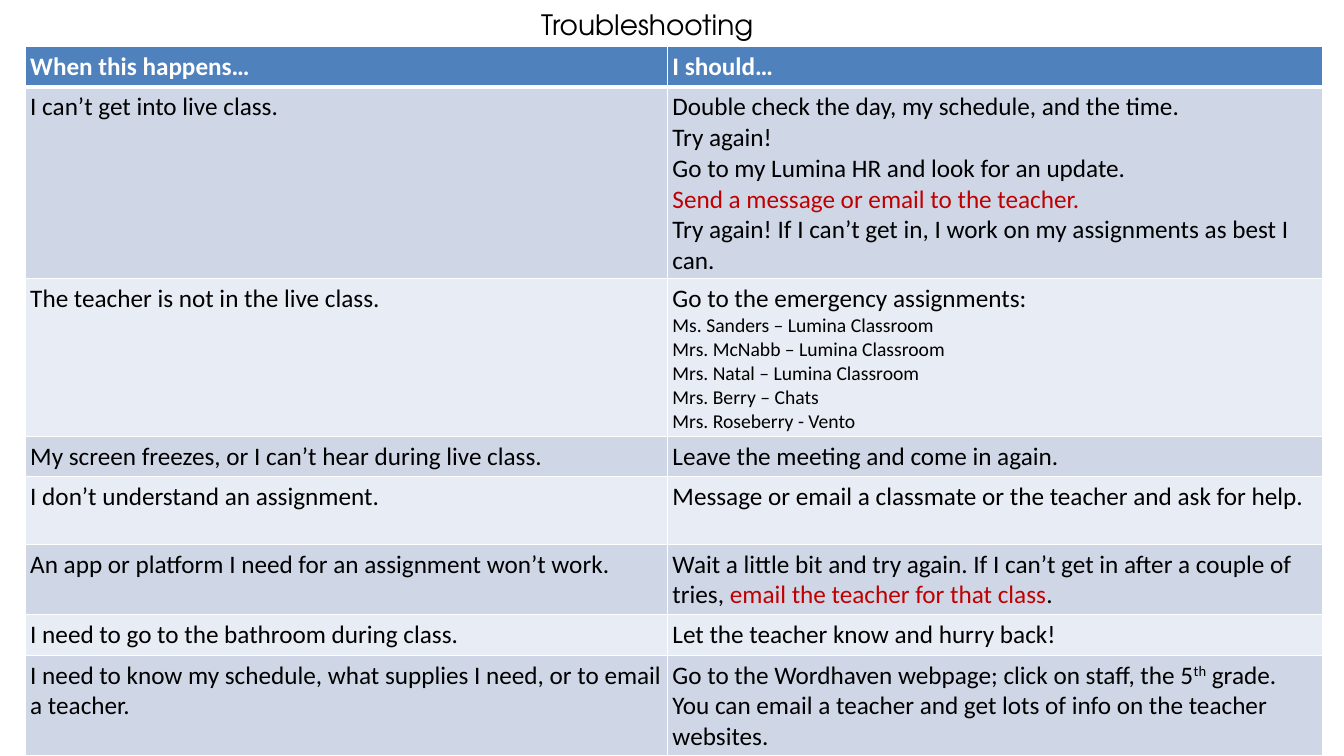
from lxml import etree
from pptx import Presentation
from pptx.dml.color import RGBColor
from pptx.enum.text import PP_ALIGN
from pptx.oxml.ns import qn
from pptx.util import Pt

PX = 9144  # EMU in one px, 100 px to the inch
INSET = 5 * PX
CENTER, LEFT = PP_ALIGN.CENTER, PP_ALIGN.LEFT

WHITE = RGBColor(0xFF, 0xFF, 0xFF)
BLACK = RGBColor(0x00, 0x00, 0x00)
RED = RGBColor(0xC0, 0x00, 0x00)
BLUE = RGBColor(0x4F, 0x81, 0xBD)
BANDS = (RGBColor(0xCF, 0xD7, 0xE7), RGBColor(0xE8, 0xEC, 0xF4))

COLUMN_WIDTHS = (637, 650)
HEADER = ("When this happens…", "I should…")
HEADER_HEIGHT = 37

# Row height, problem, and the paragraphs of the answer.
# A paragraph is a list of spans: text and its format.
PROBLEMS = [
    (181, "I can’t get into live class.", [
        [("Double check the day, my schedule, and the time.", {})],
        [("Try again!", {})],
        [("Go to my Lumina HR and look for an update.", {})],
        [("Send a message or email to the teacher.", {"color": RED})],
        [("Try again! If I can’t get in, I work on my assignments as best I can.", {})],
    ]),
    (149, "The teacher is not in the live class.", [
        [("Go to the emergency assignments:", {})],
        *[[(f"{teacher}", {"size": 14})] for teacher in (
            "Ms. Sanders – Lumina Classroom",
            "Mrs. McNabb – Lumina Classroom",
            "Mrs. Natal – Lumina Classroom",
            "Mrs. Berry – Chats",
            "Mrs. Roseberry - Vento",
        )],
    ]),
    (38, "My screen freezes, or I can’t hear during live class.", [
        [("Leave the meeting and come in again.", {})],
    ]),
    (67, "I don’t understand an assignment.", [
        [("Message or email a classmate or the teacher and ask for help.", {})],
    ]),
    (67, "An app or platform I need for an assignment won’t work.", [
        [("Wait a little bit and try again. If I can’t get in after a couple of tries, ", {}),
         ("email the teacher for that class", {"color": RED}),
         (".", {})],
    ]),
    (38, "I need to go to the bathroom during class.", [
        [("Let the teacher know and hurry back!", {})],
    ]),
    (95, "I need to know my schedule, what supplies I need, or to email a teacher.", [
        [("Go to the Wordhaven webpage; click on staff, the 5", {}),
         ("th", {"raised": 30}),
         (" grade. You can email a teacher and get lots of info on the teacher websites.", {})],
    ]),
]


def add_span(para, text, size=18, font="Calibri", color=BLACK, bold=False, raised=0):
    span = para.add_run()
    span.text = text
    span.font.size = Pt(size)
    span.font.name = font
    span.font.color.rgb = color
    span.font.bold = bold
    if raised:
        span.font._element.set("baseline", str(raised * 1000))


def write_paras(frame, paras, align=LEFT):
    for index, spans in enumerate(paras):
        para = frame.add_paragraph() if index else frame.paragraphs[0]
        para.alignment = align
        for text, style in spans:
            add_span(para, text, **style)


def set_borders(cell, **widths):
    """Draw white cell borders; widths are points by side letter."""
    properties = cell._tc.get_or_add_tcPr()
    for index, side in enumerate("LRTB"):
        line = etree.Element(qn(f"a:ln{side}"), w=str(Pt(widths.get(side, 1))))
        fill = etree.SubElement(line, qn("a:solidFill"))
        etree.SubElement(fill, qn("a:srgbClr"), val=str(WHITE))
        properties.insert(index, line)


def fill_cell(cell, paras, color, **borders):
    cell.margin_left = cell.margin_right = INSET
    cell.margin_top = cell.margin_bottom = INSET
    cell.fill.solid()
    cell.fill.fore_color.rgb = color
    set_borders(cell, **borders)
    write_paras(cell.text_frame, paras)


def add_title(page, left, top, width, height):
    box = page.shapes.add_textbox(left * PX, top * PX, width * PX, height * PX)
    frame = box.text_frame
    frame.word_wrap = True
    frame.margin_left = frame.margin_right = INSET
    frame.margin_top = frame.margin_bottom = INSET
    style = {"size": 20, "font": "TeX Gyre Adventor"}
    write_paras(frame, [[("Troubleshooting", style)]], CENTER)


def add_problem_table(page, left, top):
    heights = [HEADER_HEIGHT] + [height for height, *_ in PROBLEMS]
    table = page.shapes.add_table(
        len(heights), len(COLUMN_WIDTHS), left * PX, top * PX,
        sum(COLUMN_WIDTHS) * PX, sum(heights) * PX).table
    for column, width in zip(table.columns, COLUMN_WIDTHS):
        column.width = width * PX
    for row, height in zip(table.rows, heights):
        row.height = height * PX

    # Header row
    for column, text in enumerate(HEADER):
        spans = [(text, {"color": WHITE, "bold": True})]
        fill_cell(table.cell(0, column), [spans], BLUE, B=3)

    # One banded row per problem
    for row, (_, problem, answer) in enumerate(PROBLEMS, start=1):
        band = BANDS[(row - 1) % 2]
        top_border = 3 if row == 1 else 1
        for column, paras in enumerate(([[(problem, {})]], answer)):
            fill_cell(table.cell(row, column), paras, band, T=top_border)


def main():
    deck = Presentation()
    deck.slide_width, deck.slide_height = 1333 * PX, 750 * PX
    page = deck.slides.add_slide(deck.slide_layouts[6])
    add_title(page, 389, 2, 506, 42)
    add_problem_table(page, 25, 46)
    deck.save("out.pptx")


if __name__ == "__main__":
    main()
